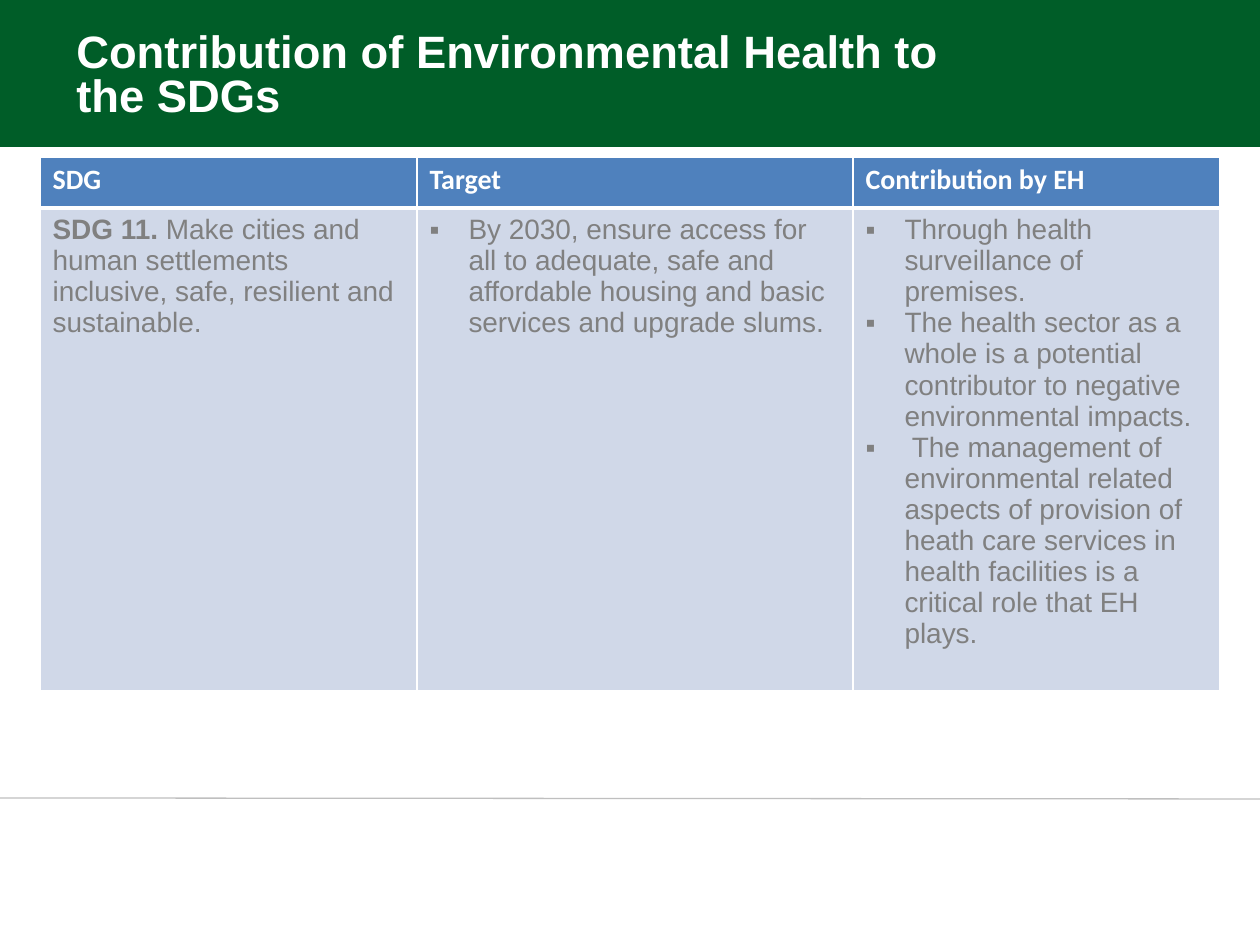
from lxml import etree
from pptx import Presentation
from pptx.dml.color import RGBColor
from pptx.enum.shapes import MSO_CONNECTOR, MSO_SHAPE
from pptx.enum.text import MSO_ANCHOR
from pptx.oxml.ns import qn
from pptx.util import Pt

RECTANGLE = MSO_SHAPE.RECTANGLE
STRAIGHT = MSO_CONNECTOR.STRAIGHT
BOTTOM = MSO_ANCHOR.BOTTOM

GREEN = RGBColor(0x00, 0x5D, 0x28)
BLUE = RGBColor(0x4F, 0x81, 0xBD)
PALE_BLUE = RGBColor(0xD0, 0xD8, 0xE8)
WHITE = RGBColor(0xFF, 0xFF, 0xFF)
GREY = RGBColor(0x80, 0x80, 0x80)
RULE_GREY = RGBColor(0xBF, 0xBF, 0xBF)

PX_PER_INCH = 126
INDENT = 39
BULLET = "▪"

TITLE_FORMAT = {"name": "Arial", "size": Pt(25.9), "bold": True}
HEADING_FORMAT = {"name": "Calibri", "size": Pt(16), "bold": True}
BODY_FORMAT = {"name": "Arial", "size": Pt(16), "bold": False}
GOAL_FORMAT = {**BODY_FORMAT, "bold": True}

COLUMN_WIDTHS = [377, 436, 367]
ROW_HEIGHTS = [51, 479]
HEADINGS = ["SDG", "Target", "Contribution by EH"]
GOAL = ("SDG 11. ", "Make cities and human settlements inclusive, safe, "
        "resilient and sustainable.")
TARGETS = ["By 2030, ensure access for all to adequate, safe and affordable "
           "housing and basic services and upgrade slums."]
CONTRIBUTIONS = [
    "Through health surveillance of premises.",
    "The health sector as a whole is a potential contributor to negative "
    "environmental impacts.",
    " The management of environmental related aspects of provision of heath "
    "care services in health facilities is a critical role that EH plays.",
]


def px(length):
    return round(length * 914400 / PX_PER_INCH)


def add_run(paragraph, text, font_format, color):
    run = paragraph.add_run()
    run.text = text
    for attribute, value in font_format.items():
        setattr(run.font, attribute, value)
    run.font.color.rgb = color


def add_bullets(text_frame, items):
    for index, item in enumerate(items):
        paragraph = text_frame.add_paragraph() if index else text_frame.paragraphs[0]
        properties = paragraph._p.get_or_add_pPr()
        properties.set("marL", str(px(INDENT)))
        properties.set("indent", str(-px(INDENT)))
        etree.SubElement(properties, qn("a:buFont"), typeface="Arial")
        etree.SubElement(properties, qn("a:buChar"), char=BULLET)
        add_run(paragraph, item, BODY_FORMAT, GREY)


def style_cell(cell, fill, bottom_width):
    properties = cell._tc.get_or_add_tcPr()
    widths = {"a:lnL": 1, "a:lnR": 1, "a:lnT": 1, "a:lnB": bottom_width}
    for side, width in widths.items():
        border = etree.SubElement(properties, qn(side), w=str(Pt(width)))
        border_fill = etree.SubElement(border, qn("a:solidFill"))
        etree.SubElement(border_fill, qn("a:srgbClr"), val=str(WHITE))
    cell.fill.solid()
    cell.fill.fore_color.rgb = fill


def add_header(slide, left, top, width, height):
    band = slide.shapes.add_shape(RECTANGLE, px(left), px(top), px(width), px(height))
    band.shadow.inherit = False
    band.fill.solid()
    band.fill.fore_color.rgb = GREEN
    band.line.fill.background()
    title = slide.shapes.add_textbox(px(left + 64), px(top + 16), px(922), px(111))
    title.text_frame.word_wrap = True
    title.text_frame.vertical_anchor = BOTTOM
    paragraph = title.text_frame.paragraphs[0]
    paragraph.line_spacing = 0.8
    add_run(paragraph, "Contribution of Environmental Health to the SDGs",
            TITLE_FORMAT, WHITE)


def add_footer_rule(slide, left, top, width, height):
    rule = slide.shapes.add_connector(
        STRAIGHT, px(left), px(top), px(left + width), px(top + height))
    rule.line.color.rgb = RULE_GREY
    rule.line.width = Pt(0.75)
    etree.SubElement(rule._element.spPr, qn("a:effectLst"))


def add_goal_table(slide, left, top, width, height):
    table = slide.shapes.add_table(
        len(ROW_HEIGHTS), len(COLUMN_WIDTHS),
        px(left), px(top), px(width), px(height)).table
    for column, column_width in zip(table.columns, COLUMN_WIDTHS):
        column.width = px(column_width)
    for row, row_height in zip(table.rows, ROW_HEIGHTS):
        row.height = px(row_height)

    for column, heading in enumerate(HEADINGS):
        heading_cell, body_cell = table.cell(0, column), table.cell(1, column)
        style_cell(heading_cell, BLUE, 3)
        style_cell(body_cell, PALE_BLUE, 1)
        add_run(heading_cell.text_frame.paragraphs[0], heading, HEADING_FORMAT, WHITE)

    goal_paragraph = table.cell(1, 0).text_frame.paragraphs[0]
    for text, font_format in zip(GOAL, (GOAL_FORMAT, BODY_FORMAT)):
        add_run(goal_paragraph, text, font_format, GREY)
    add_bullets(table.cell(1, 1).text_frame, TARGETS)
    add_bullets(table.cell(1, 2).text_frame, CONTRIBUTIONS)


def main():
    presentation = Presentation()
    presentation.slide_width = px(1260)
    presentation.slide_height = px(945)
    slide = presentation.slides.add_slide(presentation.slide_layouts[6])
    add_header(slide, 0, 0, 1260, 147)
    add_footer_rule(slide, 0, 798, 1260, 1)
    add_goal_table(slide, 40, 157, sum(COLUMN_WIDTHS), sum(ROW_HEIGHTS))
    presentation.save("out.pptx")


if __name__ == "__main__":
    main()
